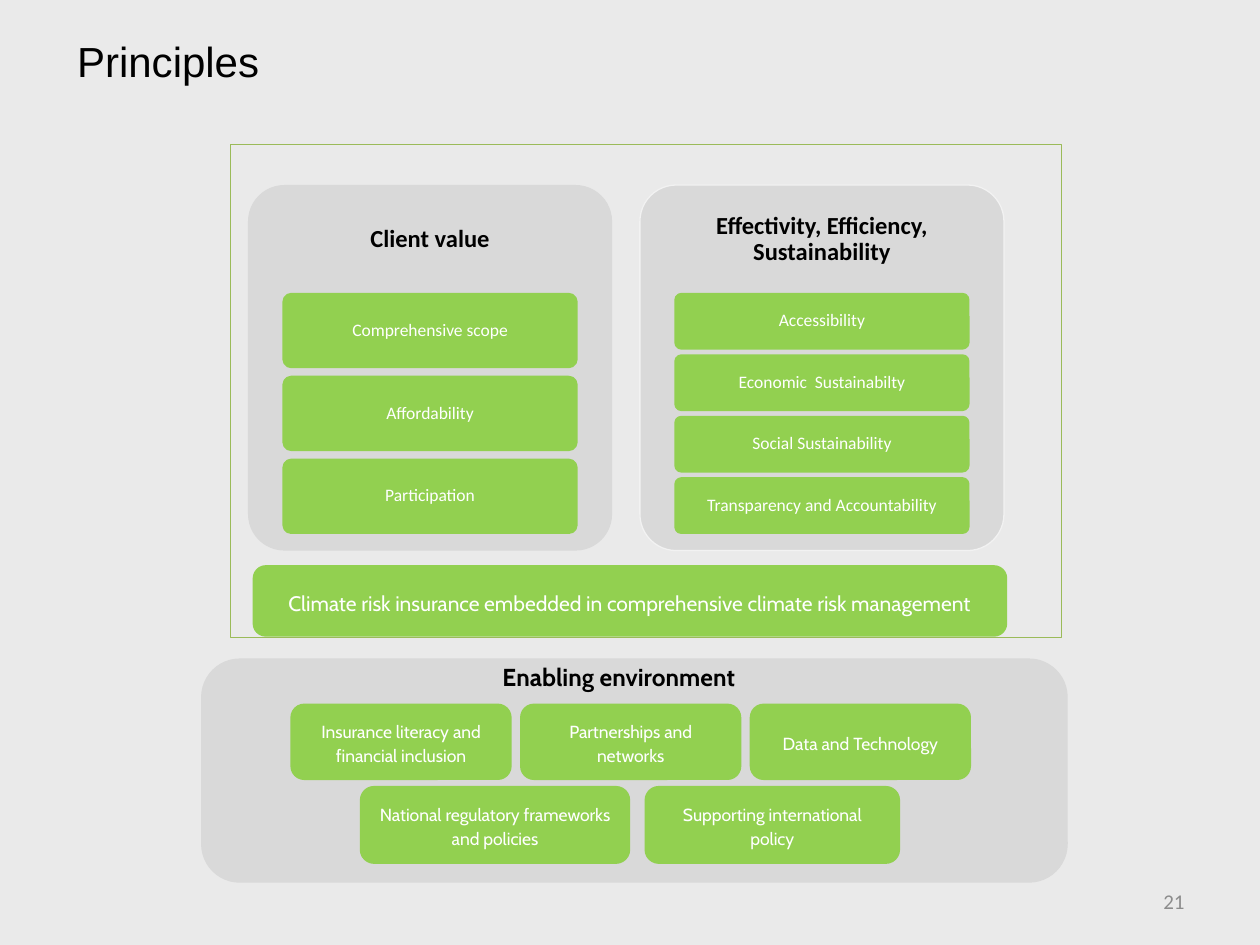
from pptx import Presentation
from pptx.dml.color import RGBColor
from pptx.enum.shapes import MSO_SHAPE
from pptx.enum.text import MSO_ANCHOR, MSO_AUTO_SIZE, PP_ALIGN
from pptx.util import Cm, Pt

COLORS = {
    "background": "EAEAEA", "panel": "D9D9D9", "panel_edge": "F2F2F2",
    "green": "92D050", "frame": "9BBB59", "black": "000000",
    "white": "FFFFFF", "page_number": "8C8C8C",
}

# Lengths are in centimetres.
PANELS = [
    {"left": 5.0, "edge": None, "heading": "Client value",
     "items": ["Comprehensive scope", "Affordability", "Participation"]},
    {"left": 12.9, "edge": "panel_edge",
     "heading": "Effectivity, Efficiency, Sustainability",
     "items": ["Accessibility", "Economic  Sustainabilty",
               "Social Sustainability", "Transparency and Accountability"]},
]
PANEL_TOP, PANEL_WIDTH, PANEL_HEIGHT = 3.73, 7.34, 7.37
HEADING_HEIGHT = 2.21
ITEMS_HEIGHT, ITEM_INDENT, ITEM_GAP_RATIO = 4.79, 0.73, 0.154

FOUNDATION = "Climate risk insurance embedded in comprehensive climate risk management"

# Each row: left, top, height, gap, then (label, width) pairs
ENABLING_ROWS = [
    (5.89, 14.22, 1.47, 0.24, [("Insurance literacy and financial inclusion", 4.39),
                               ("Partnerships and networks", 4.39),
                               ("Data and Technology", 4.39)]),
    (7.29, 15.88, 1.5, 0.36, [("National regulatory frameworks and policies", 5.38),
                              ("Supporting international policy", 5.08)]),
]


def rgb(name):
    return RGBColor.from_string(COLORS[name])


def write(shape, text, size, font="Calibri", color="white", bold=False,
          align=PP_ALIGN.CENTER, anchor=MSO_ANCHOR.MIDDLE,
          spacing=1.0, after=0, inset=None):
    frame = shape.text_frame
    frame.text = text
    frame.word_wrap = True
    frame.auto_size = MSO_AUTO_SIZE.NONE
    frame.vertical_anchor = anchor
    if inset is not None:
        frame.margin_left = frame.margin_right = Cm(inset)
        frame.margin_top = frame.margin_bottom = Cm(inset)
    paragraph = frame.paragraphs[0]
    paragraph.alignment = align
    paragraph.line_spacing = spacing
    paragraph.space_after = Pt(after)
    paragraph.font.name = font
    paragraph.font.size = Pt(size)
    paragraph.font.bold = bold
    paragraph.font.color.rgb = rgb(color)


def add_box(slide, area, fill, edge, edge_width=2, corner=0.167, kind=MSO_SHAPE.ROUNDED_RECTANGLE):
    box = slide.shapes.add_shape(kind, *map(Cm, area))
    box.shadow.inherit = False
    if kind == MSO_SHAPE.ROUNDED_RECTANGLE:
        box.adjustments[0] = corner
    if fill:
        box.fill.solid()
        box.fill.fore_color.rgb = rgb(fill)
    else:
        box.fill.background()
    if edge:
        box.line.color.rgb = rgb(edge)
        box.line.width = Pt(edge_width)
    else:
        box.line.fill.background()
    return box


def add_text(slide, area, text, size, **style):
    write(slide.shapes.add_textbox(*map(Cm, area)), text, size, **style)


def add_cabin_box(slide, area, text, size):
    box = add_box(slide, area, "green", "green")
    write(box, text, size, font="Cabin", spacing=1.15, after=10)


def add_panel(slide, left, edge, heading, items):
    add_box(slide, (left, PANEL_TOP, PANEL_WIDTH, PANEL_HEIGHT),
            "panel", edge, edge_width=0.75, corner=0.1)
    add_text(slide, (left, PANEL_TOP, PANEL_WIDTH, HEADING_HEIGHT), heading, 14,
             color="black", bold=True, spacing=0.9, after=5, inset=0.15)
    count = len(items)
    height = ITEMS_HEIGHT / (count + (count - 1) * ITEM_GAP_RATIO)
    for index, item in enumerate(items):
        top = PANEL_TOP + HEADING_HEIGHT + index * height * (1 + ITEM_GAP_RATIO)
        area = (left + ITEM_INDENT, top, PANEL_WIDTH - 2 * ITEM_INDENT, height)
        box = add_box(slide, area, "green", "green", corner=0.1)
        write(box, item, 10, spacing=0.9, after=3.5, inset=0.06)


def add_enabling_environment(slide):
    add_box(slide, (4.09, 13.31, 17.4, 4.45), "panel", "panel")
    for left, top, height, gap, cells in ENABLING_ROWS:
        for label, width in cells:
            add_cabin_box(slide, (left, top, width, height), label, 10)
            left += width + gap
    add_text(slide, (9.88, 13.13, 7.47, 1.09), "Enabling environment", 14,
             font="Cabin", color="black", bold=True, align=PP_ALIGN.LEFT,
             anchor=MSO_ANCHOR.TOP, spacing=1.15, after=10)


def main():
    deck = Presentation()
    deck.slide_width, deck.slide_height = Cm(25.4), Cm(19.05)
    slide = deck.slides.add_slide(deck.slide_layouts[5])
    slide.background.fill.solid()
    slide.background.fill.fore_color.rgb = rgb("background")

    title = slide.shapes.title
    title.left, title.top, title.width, title.height = map(Cm, (1.3, 0.58, 5.99, 1.27))
    write(title, "Principles", 24, font="Arial", color="black",
          align=PP_ALIGN.LEFT, anchor=MSO_ANCHOR.TOP)

    add_enabling_environment(slide)
    add_box(slide, (4.65, 2.92, 16.74, 9.93), None, "frame",
            edge_width=0.5, kind=MSO_SHAPE.RECTANGLE)
    for panel in PANELS:
        add_panel(slide, **panel)
    add_cabin_box(slide, (5.13, 11.43, 15.14, 1.37), FOUNDATION, 12)
    add_text(slide, (18.21, 17.65, 5.92, 1.02), "21", 12,
             color="page_number", align=PP_ALIGN.RIGHT)
    deck.save("out.pptx")


if __name__ == "__main__":
    main()
